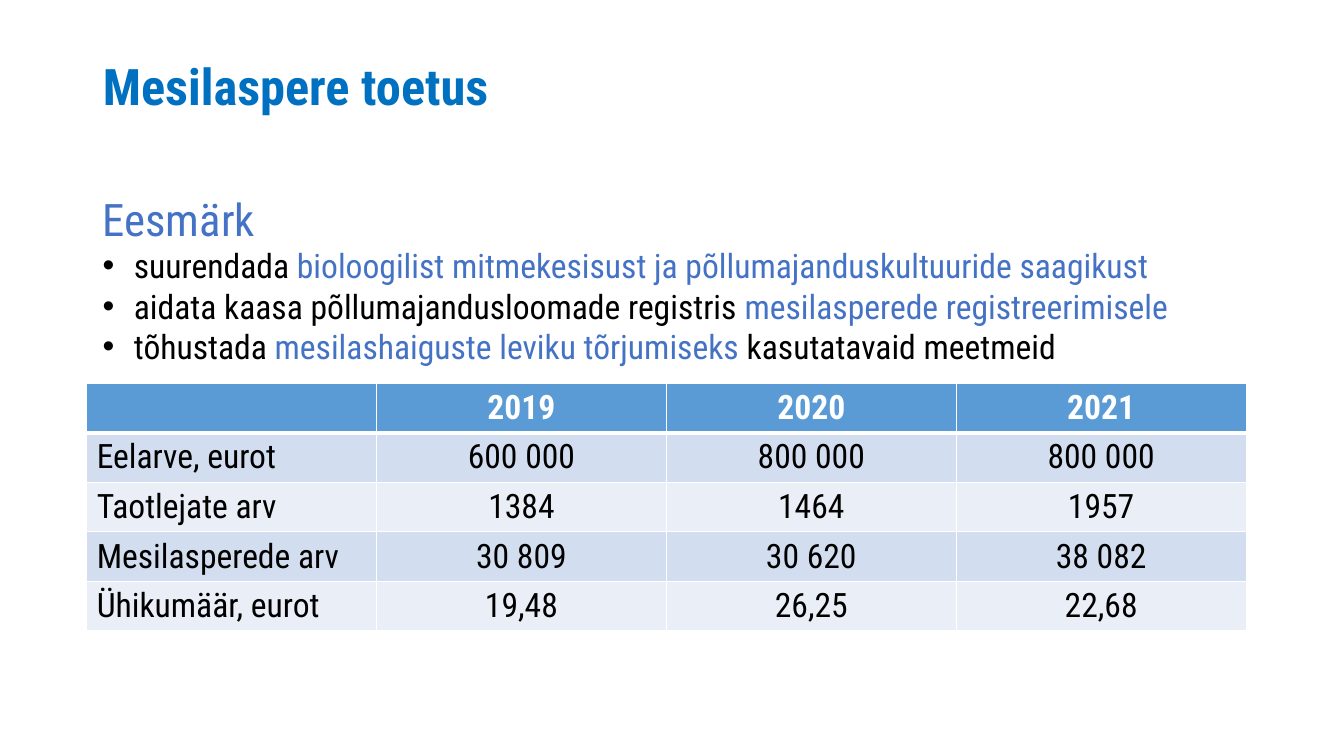
from lxml.etree import SubElement
from pptx import Presentation
from pptx.dml.color import RGBColor
from pptx.enum.text import MSO_ANCHOR, PP_ALIGN
from pptx.oxml.ns import qn
from pptx.util import Inches, Pt

FONT = "Roboto Condensed"
TITLE_BLUE = RGBColor(0x00, 0x70, 0xC0)
ACCENT_BLUE = RGBColor(0x44, 0x72, 0xC4)
HEADER_BLUE = RGBColor(0x5B, 0x9B, 0xD5)
BAND_COLORS = (RGBColor(0xD2, 0xDE, 0xEF), RGBColor(0xEA, 0xEF, 0xF7))
BLACK = RGBColor(0, 0, 0)
WHITE = RGBColor(255, 255, 255)

# Each goal is a list of (text, is highlighted) parts.
GOALS = [
    [("suurendada ", False),
     ("bioloogilist mitmekesisust ja põllumajanduskultuuride saagikust", True)],
    [("aidata kaasa põllumajandusloomade registris ", False),
     ("mesilasperede registreerimisele", True)],
    [("tõhustada ", False), ("mesilashaiguste leviku tõrjumiseks", True),
     (" kasutatavaid meetmeid", False)],
]
SUPPORT_ROWS = [
    ["", "2019", "2020", "2021"],
    ["Eelarve, eurot", "600 000", "800 000", "800 000"],
    ["Taotlejate arv", "1384", "1464", "1957"],
    ["Mesilasperede arv", "30 809", "30 620", "38 082"],
    ["Ühikumäär, eurot", "19,48", "26,25", "22,68"],
]


def set_font(paragraph, size, color, bold=False):
    font = paragraph.font
    font.name, font.size, font.bold = FONT, Pt(size), bold
    font.color.rgb = color


def add_bullet(paragraph, indent):
    properties = paragraph._p.get_or_add_pPr()
    properties.set("marL", str(Inches(indent)))
    properties.set("indent", str(-Inches(indent)))
    bullet_font = properties.makeelement(qn("a:buFont"), {"typeface": "Arial"})
    bullet = properties.makeelement(qn("a:buChar"), {"char": "•"})
    properties.insert(0, bullet_font)
    properties.insert(1, bullet)


def set_borders(cell, bottom_width):
    """Draw white borders, 1 pt wide except at the bottom."""
    properties = cell._tc.get_or_add_tcPr()
    widths = {"a:lnL": 1, "a:lnR": 1, "a:lnT": 1, "a:lnB": bottom_width}
    for position, (side, width) in enumerate(widths.items()):
        line = properties.makeelement(qn(side), {"w": str(Pt(width))})
        fill = SubElement(line, qn("a:solidFill"))
        SubElement(fill, qn("a:srgbClr"), val=str(WHITE))
        properties.insert(position, line)


def place_title(slide, left, top, width, height):
    title = slide.shapes.title
    title.left, title.top = Inches(left), Inches(top)
    title.width, title.height = Inches(width), Inches(height)
    frame = title.text_frame
    frame.text = "Mesilaspere toetus"
    frame.vertical_anchor = MSO_ANCHOR.MIDDLE
    paragraph = frame.paragraphs[0]
    paragraph.alignment = PP_ALIGN.LEFT
    paragraph.line_spacing = 0.9
    set_font(paragraph, 36, TITLE_BLUE, bold=True)


def add_goals(slide, left, top, width, height):
    box = slide.shapes.add_textbox(
        Inches(left), Inches(top), Inches(width), Inches(height))
    frame = box.text_frame
    frame.word_wrap = True
    heading = frame.paragraphs[0]
    heading.text = "Eesmärk"
    set_font(heading, 32, ACCENT_BLUE)
    for goal in GOALS:
        paragraph = frame.add_paragraph()
        set_font(paragraph, 24, BLACK)
        add_bullet(paragraph, 0.31)
        for text, highlighted in goal:
            run = paragraph.add_run()
            run.text = text
            if highlighted:
                run.font.color.rgb = ACCENT_BLUE


def add_support_table(slide, left, top, width, height):
    table = slide.shapes.add_table(
        len(SUPPORT_ROWS), len(SUPPORT_ROWS[0]),
        Inches(left), Inches(top), Inches(width), Inches(height)).table
    for row_index, values in enumerate(SUPPORT_ROWS):
        header = row_index == 0
        for column_index, value in enumerate(values):
            cell = table.cell(row_index, column_index)
            cell.text = value
            cell.fill.solid()
            cell.fill.fore_color.rgb = (
                HEADER_BLUE if header else BAND_COLORS[(row_index - 1) % 2])
            set_borders(cell, bottom_width=3 if header else 1)
            paragraph = cell.text_frame.paragraphs[0]
            paragraph.alignment = PP_ALIGN.CENTER if column_index else PP_ALIGN.LEFT
            set_font(paragraph, 24, WHITE if header else BLACK, bold=header)


def main():
    presentation = Presentation()
    presentation.slide_width = Inches(13.33)
    presentation.slide_height = Inches(7.5)
    slide = presentation.slides.add_slide(presentation.slide_layouts[5])
    place_title(slide, 0.92, 0.4, 11.5, 0.97)
    add_support_table(slide, 0.86, 3.8, 11.5, 2.45)
    add_goals(slide, 0.92, 1.85, 11.5, 1.85)
    presentation.save("out.pptx")


if __name__ == "__main__":
    main()
